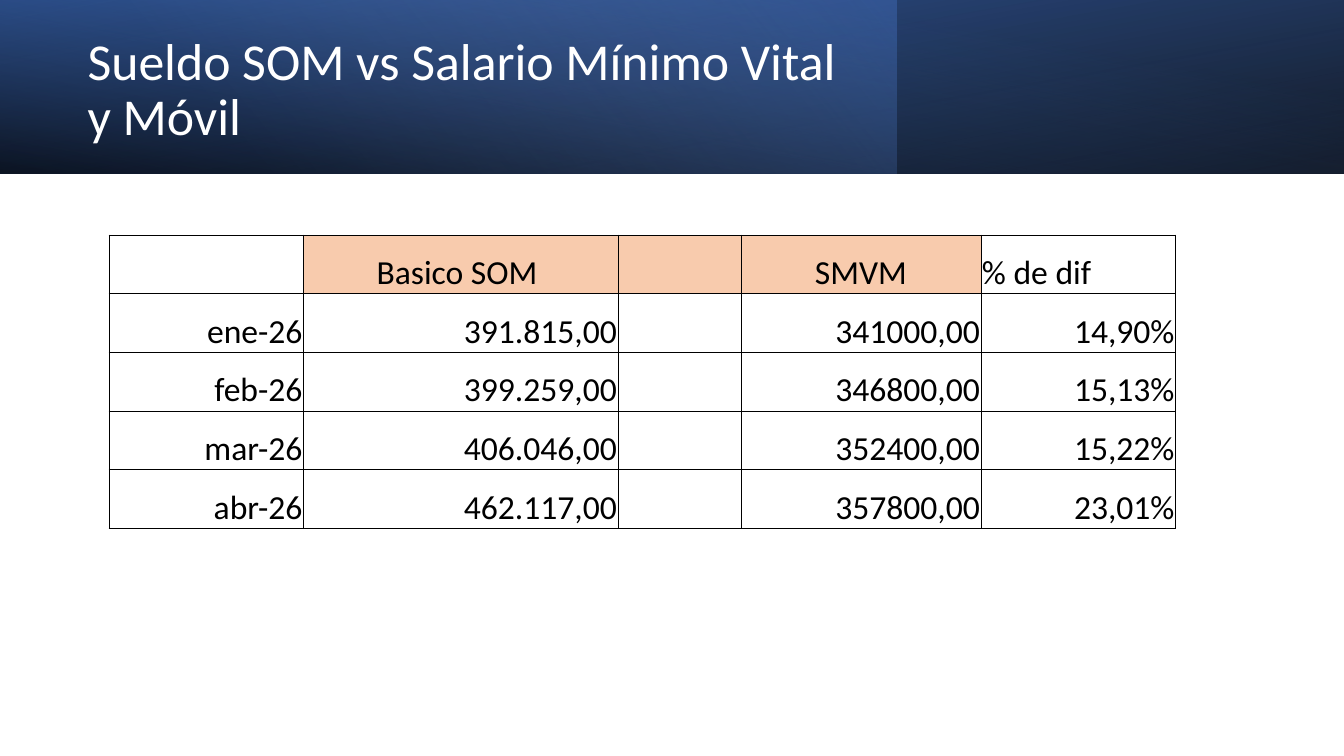
from dataclasses import dataclass

from lxml import etree
from pptx import Presentation
from pptx.dml.color import RGBColor
from pptx.enum.shapes import MSO_SHAPE
from pptx.enum.text import MSO_ANCHOR, PP_ALIGN
from pptx.oxml.ns import qn
from pptx.util import Inches, Pt

RECTANGLE = MSO_SHAPE.RECTANGLE
MIDDLE, BOTTOM = MSO_ANCHOR.MIDDLE, MSO_ANCHOR.BOTTOM
LEFT, CENTER, RIGHT = PP_ALIGN.LEFT, PP_ALIGN.CENTER, PP_ALIGN.RIGHT


@dataclass(frozen=True)
class Theme:
    """Colours, font and type sizes of the slide."""
    font: str = "Calibri"
    title_size: int = 37
    table_size: int = 24
    border_width: float = 0.5
    black: str = "000000"
    white: str = "FFFFFF"
    navy: str = "2F5597"
    blue: str = "4472C4"
    light_blue: str = "8FAADC"
    peach: str = "F8CBAD"


THEME = Theme()
SLIDE_WIDTH, SLIDE_HEIGHT, BANNER_HEIGHT = 13.33, 7.5, 1.72
COLUMN_WIDTHS = (1.93, 3.12, 1.22, 2.38, 1.93)
TABLE_HEIGHT = 2.91
HEADER = ("", "Basico SOM ", "", "SMVM", "% de dif")
HEADER_ALIGNS = (LEFT, CENTER, CENTER, CENTER, LEFT)
HEADER_FILLS = (None, THEME.peach, THEME.peach, THEME.peach, None)
SALARIES = (
    ("ene-26", "391.815,00", "", "341000,00", "14,90%"),
    ("feb-26", "399.259,00", "", "346800,00", "15,13%"),
    ("mar-26", "406.046,00", "", "352400,00", "15,22%"),
    ("abr-26", "462.117,00", "", "357800,00", "23,01%"),
)


def write_text(frame, text, *, size, color, align=LEFT, line_spacing=None):
    """Write one formatted paragraph into a text frame."""
    paragraph = frame.paragraphs[0]
    paragraph.alignment = align
    if line_spacing:
        paragraph.line_spacing = line_spacing
    paragraph.font.size = Pt(size)
    if text:
        run = paragraph.add_run()
        run.text = text
        run.font.name = THEME.font
        run.font.size = Pt(size)
        run.font.color.rgb = RGBColor.from_string(color)


def add_gradient_band(slide, width, stops, angle, flipped=False, rotation=0):
    """Add a banner layer; stops are (position, colour, opacity), in percent."""
    band = slide.shapes.add_shape(
        RECTANGLE, 0, 0, Inches(width), Inches(BANNER_HEIGHT))
    band.shadow.inherit = False
    band.line.fill.background()
    band.rotation = rotation
    if flipped:
        band._element.spPr.find(qn("a:xfrm")).set("flipH", "1")
    band.fill.gradient()
    band.fill.gradient_angle = 360 - angle
    for gradient_stop, (position, color, _) in zip(band.fill.gradient_stops, stops):
        gradient_stop.position = position / 100
        gradient_stop.color.rgb = RGBColor.from_string(color)
    stop_colors = band._element.spPr.iter(qn("a:srgbClr"))
    for stop_color, (_, _, opacity) in zip(list(stop_colors), stops):
        etree.SubElement(stop_color, qn("a:alpha"), val=str(opacity * 1000))


def add_title(slide, text):
    """Add the white title over the banner."""
    title = slide.shapes.add_textbox(
        Inches(0.77), Inches(0.27), Inches(7.72), Inches(1.27))
    title.text_frame.word_wrap = True
    title.text_frame.vertical_anchor = MIDDLE
    write_text(title.text_frame, text, size=THEME.title_size,
               color=THEME.white, line_spacing=0.9)


def set_borders(cell):
    """Draw a thin line on the four sides of a cell."""
    properties = cell._tc.get_or_add_tcPr()
    for side in ("lnL", "lnR", "lnT", "lnB"):
        line = etree.SubElement(properties, qn(f"a:{side}"),
                                w=str(Pt(THEME.border_width)))
        fill = etree.SubElement(line, qn("a:solidFill"))
        etree.SubElement(fill, qn("a:srgbClr"), val=THEME.black)


def fill_cell(cell, text, align, color):
    """Set the borders, fill and text of a cell."""
    set_borders(cell)
    if color:
        cell.fill.solid()
        cell.fill.fore_color.rgb = RGBColor.from_string(color)
    else:
        cell.fill.background()
    cell.margin_left = cell.margin_right = cell.margin_top = Inches(0.01)
    cell.margin_bottom = 0
    cell.vertical_anchor = BOTTOM
    write_text(cell.text_frame, text, size=THEME.table_size,
               color=THEME.black, align=align)


def add_salary_table(slide):
    """Add the table that compares both salaries by month."""
    rows = (HEADER, *SALARIES)
    table = slide.shapes.add_table(
        len(rows), len(COLUMN_WIDTHS), Inches(1.08), Inches(2.33),
        Inches(sum(COLUMN_WIDTHS)), Inches(TABLE_HEIGHT)).table
    for column, width in zip(table.columns, COLUMN_WIDTHS):
        column.width = Inches(width)
    for row_index, row in enumerate(rows):
        is_header = row_index == 0
        aligns = HEADER_ALIGNS if is_header else (RIGHT,) * len(row)
        fills = HEADER_FILLS if is_header else (None,) * len(row)
        for column_index, content in enumerate(zip(row, aligns, fills)):
            fill_cell(table.cell(row_index, column_index), *content)


def main():
    """Build the slide and save it."""
    deck = Presentation()
    deck.slide_width = Inches(SLIDE_WIDTH)
    deck.slide_height = Inches(SLIDE_HEIGHT)
    slide = deck.slides.add_slide(deck.slide_layouts[6])
    add_gradient_band(slide, SLIDE_WIDTH,
                      ((0, THEME.black, 96), (100, THEME.navy, 100)),
                      angle=100, flipped=True, rotation=180)
    add_gradient_band(slide, 8.89,
                      ((0, THEME.blue, 41), (74, THEME.light_blue, 0)), angle=140)
    add_gradient_band(slide, SLIDE_WIDTH,
                      ((0, THEME.black, 63), (78, THEME.blue, 15)),
                      angle=260, flipped=True)
    add_title(slide, "Sueldo SOM vs Salario Mínimo Vital y Móvil")
    add_salary_table(slide)
    deck.save("out.pptx")


if __name__ == "__main__":
    main()
